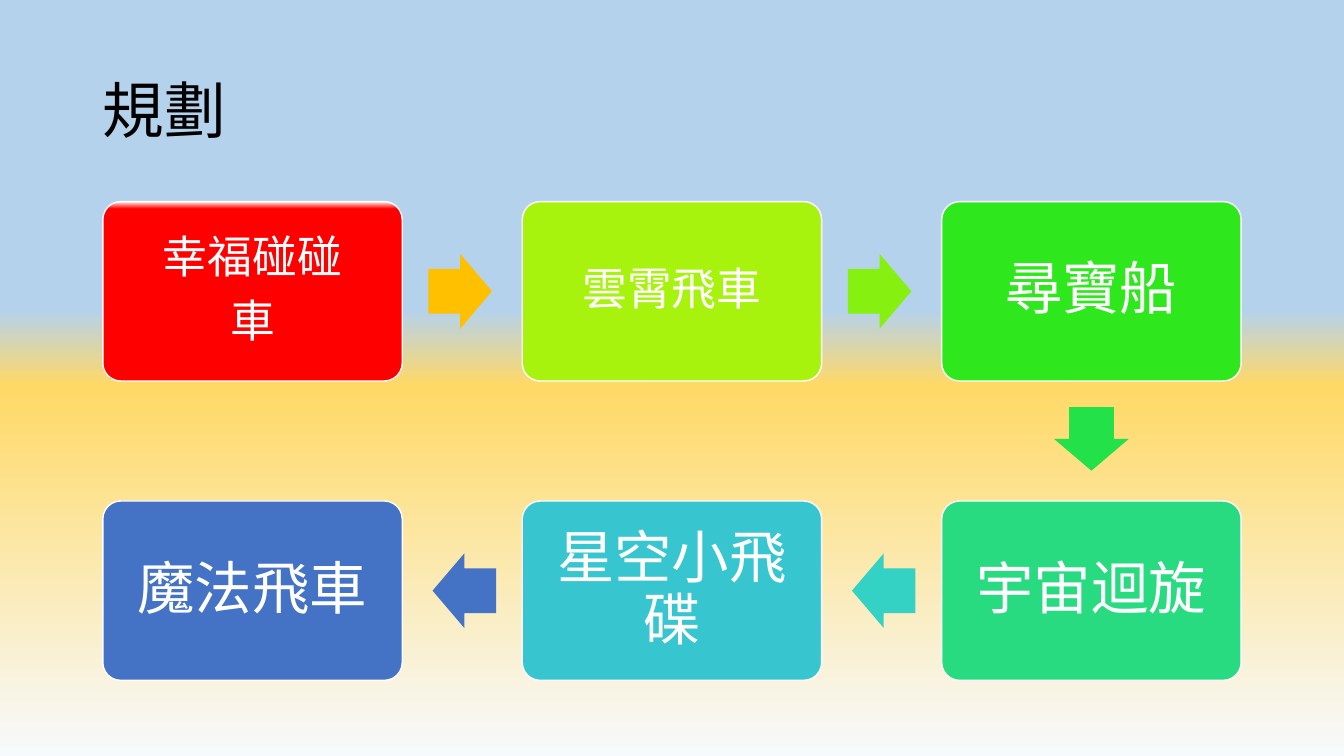
from lxml import etree
from pptx import Presentation, util as u
from pptx.dml.color import RGBColor
from pptx.enum import shapes, text
from pptx.oxml.ns import qn

FONT = "Noto Sans CJK SC"
BOX_W, BOX_H = 2.97, 1.78
ARROW_W, ARROW_H = 0.63, 0.74
LEFT, TOP = 1.02, 2
COL_STEP, ROW_STEP = 4.16, 2.97
ARROW_SHIFT = 0.02


def set_gradient(fill, root, stops):
    fill.gradient()
    fill.gradient_angle = 270
    stop_list = next(root.iter(qn("a:gsLst")))
    for old in list(stop_list):
        stop_list.remove(old)
    for percent, color in stops:
        stop = etree.SubElement(stop_list, qn("a:gs"), pos=str(percent * 1000))
        etree.SubElement(stop, qn("a:srgbClr"), val=color)


def write(frame, words, size, color, align, spacing, after=0):
    frame.text = words
    frame.word_wrap = True
    frame.vertical_anchor = text.MSO_ANCHOR.MIDDLE
    for paragraph in frame.paragraphs:
        paragraph.alignment = align
        paragraph.line_spacing = spacing
        paragraph.space_after = u.Pt(after)
        for run in paragraph.runs:
            run.font.size = u.Pt(size)
            run.font.name = FONT
            run.font.color.rgb = RGBColor.from_string(color)
            etree.SubElement(run.font._element, qn("a:ea"), typeface=FONT)


deck = Presentation()
deck.slide_width, deck.slide_height = u.Inches(13.33), u.Inches(7.5)
slide = deck.slides.add_slide(deck.slide_layouts[6])
set_gradient(slide.background.fill, slide._element,
             [(40, "B5D2EC"), (41, "B5D2EC"), (51, "FFD966"), (100, "F7FAFD")])

title = slide.shapes.add_textbox(u.Inches(0.92), u.Inches(0.4), u.Inches(11.5), u.Inches(1.45))
write(title.text_frame, "規劃", 44, "000000", text.PP_ALIGN.LEFT, 0.9)

rides = [
    ("幸福碰碰\n車", 32, 0, 0, "FF0000", "FFC000"),
    ("雲霄飛車", 32, 1, 0, "A7F30E", "86F011"),
    ("尋寶船", 41, 2, 0, "2EE71C", "23E148"),
    ("宇宙迴旋", 41, 2, 1, "29DB80", "33D2C5"),
    ("星空小飛碟", 41, 1, 1, "37C6CF", "4472C4"),
    ("魔法飛車", 41, 0, 1, "4472C4", None),
]
turns = {(1, 0): 0, (0, 1): 90, (-1, 0): 180}

for index, (name, size, col, row, box_color, arrow_color) in enumerate(rides):
    x, y = LEFT + col * COL_STEP, TOP + row * ROW_STEP
    ride = slide.shapes.add_shape(shapes.MSO_SHAPE.ROUNDED_RECTANGLE,
                                  u.Inches(x), u.Inches(y), u.Inches(BOX_W), u.Inches(BOX_H))
    ride.adjustments[0] = 0.1
    ride.shadow.inherit = False
    if index == 0:
        set_gradient(ride.fill, ride._element,
                     [(0, "F8F5E9"), (4, box_color), (100, box_color)])
    else:
        ride.fill.solid()
        ride.fill.fore_color.rgb = RGBColor.from_string(box_color)
    ride.line.color.rgb = RGBColor.from_string("FFFFFF")
    ride.line.width = u.Pt(1)
    frame = ride.text_frame
    inset = u.Inches(0.13 if size == 32 else 0.17)
    frame.margin_left = frame.margin_right = frame.margin_top = frame.margin_bottom = inset
    write(frame, name, size, "FFFFFF", text.PP_ALIGN.CENTER, 0.9, 0.35 * size)

    if arrow_color:
        next_col, next_row = rides[index + 1][2:4]
        dx, dy = next_col - col, next_row - row
        center_x = x + BOX_W / 2 + dx * (COL_STEP / 2 - ARROW_SHIFT)
        center_y = y + BOX_H / 2 + dy * (ROW_STEP / 2 - ARROW_SHIFT)
        arrow = slide.shapes.add_shape(shapes.MSO_SHAPE.RIGHT_ARROW,
                                       u.Inches(center_x - ARROW_W / 2), u.Inches(center_y - ARROW_H / 2),
                                       u.Inches(ARROW_W), u.Inches(ARROW_H))
        arrow.adjustments[0] = 0.6
        arrow.rotation = turns[dx, dy]
        arrow.shadow.inherit = False
        arrow.fill.solid()
        arrow.fill.fore_color.rgb = RGBColor.from_string(arrow_color)
        arrow.line.fill.background()

deck.save("out.pptx")
